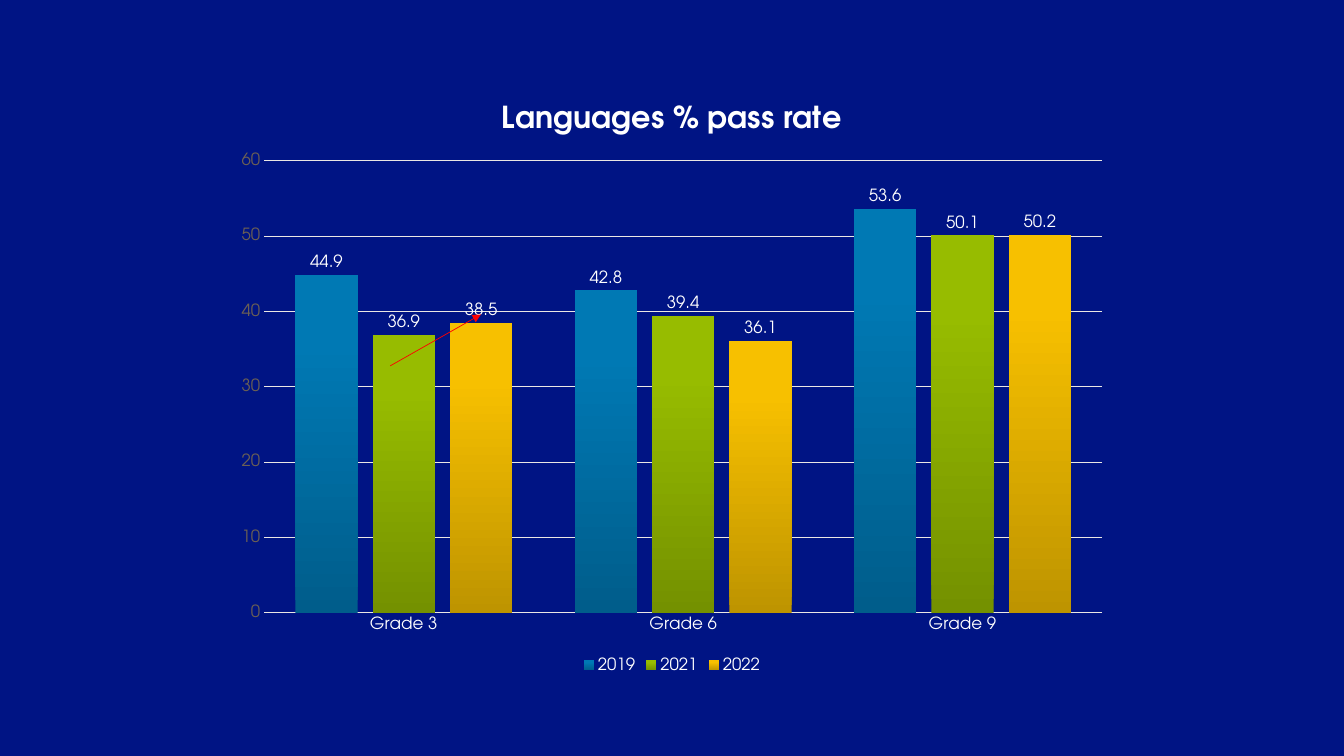
from copy import deepcopy

from lxml.etree import SubElement
from pptx import Presentation
from pptx.chart.data import CategoryChartData
from pptx.dml.color import RGBColor
from pptx.enum.chart import XL_CHART_TYPE, XL_LABEL_POSITION, XL_LEGEND_POSITION, XL_TICK_MARK
from pptx.enum.shapes import MSO_CONNECTOR
from pptx.oxml.ns import qn
from pptx.util import Inches, Pt

FONT = "TeX Gyre Adventor"
COLORS = {"background": "001484", "text": "FFFFFF", "scale": "6C6054",
          "grid": "EAE7E4", "trend": "FF0000"}
PASS_RATES = {
    "2019": ((44.9, 42.8, 53.6), ("005D8B", "0079B4", "007AB5")),
    "2021": ((36.9, 39.4, 50.1), ("749100", "97BC00", "98BD00")),
    "2022": ((38.5, 36.1, 50.2), ("BE9400", "F7C000", "F8C100")),
}


def set_font(font, color, size=12, bold=False):
    for name, value in {"name": FONT, "size": Pt(size), "bold": bold}.items():
        setattr(font, name, value)
    font.color.rgb = RGBColor.from_string(COLORS[color])


def set_line(line, color, width):
    line.color.rgb = RGBColor.from_string(COLORS[color])
    line.width = Pt(width)


deck = Presentation()
deck.slide_width, deck.slide_height = Inches(13.33), Inches(7.5)
page = deck.slides.add_slide(deck.slide_layouts[6])
page.background.fill.solid()
page.background.fill.fore_color.rgb = RGBColor.from_string(COLORS["background"])

data = CategoryChartData(number_format="0.0")
data.categories = ["Grade 3", "Grade 6", "Grade 9"]
for year, (rates, shades) in PASS_RATES.items():
    data.add_series(year, rates)
chart = page.shapes.add_chart(XL_CHART_TYPE.COLUMN_CLUSTERED, Inches(2.22), Inches(0.79),
                              Inches(8.89), Inches(5.93), data).chart
set_font(chart.font, "text")

chart.has_title = True
para = chart.chart_title.text_frame.paragraphs[0]
span = para.add_run()
span.text = "Languages % pass rate"
set_font(span.font, "text", 21.6, True)
chart.chart_title.include_in_layout = False

chart.has_legend = True
chart.legend.position = XL_LEGEND_POSITION.BOTTOM
chart.legend.include_in_layout = False
set_font(chart.legend.font, "text")

grades, scale = chart.category_axis, chart.value_axis
for axis, color in ((grades, "text"), (scale, "scale")):
    axis.major_tick_mark = axis.minor_tick_mark = XL_TICK_MARK.NONE
    set_font(axis.tick_labels.font, color)
set_line(grades.format.line, "grid", 0.75)
scale.format.line.fill.background()
set_line(scale.major_gridlines.format.line, "grid", 0.75)
scale.minimum_scale, scale.maximum_scale, scale.major_unit = 0, 60, 10
scale.tick_labels.number_format = "0"
scale.tick_labels.number_format_is_linked = False

plot = chart.plots[0]
plot.gap_width, plot.overlap, plot.vary_by_categories = 100, -24, False
for series, (rates, shades) in zip(plot.series, PASS_RATES.values()):
    fill = series.format.fill
    fill.gradient()
    fill.gradient_angle = 90
    stops = series._element.find(".//" + qn("a:gsLst"))
    stops.insert(1, deepcopy(stops[0]))
    stops[1].set("pos", "80000")
    for stop, shade in zip(fill.gradient_stops, shades):
        stop.color.rgb = RGBColor.from_string(shade)
    labels = series.data_labels
    labels.show_value = True
    labels.position = XL_LABEL_POSITION.OUTSIDE_END
    set_font(labels.font, "text")

plot_area = chart._chartSpace.find(".//" + qn("c:plotArea"))
layout = plot_area.find(qn("c:layout"))
if layout is None:
    layout = SubElement(plot_area, qn("c:layout"))
    plot_area.insert(0, layout)
frame = SubElement(layout, qn("c:manualLayout"))
for tag, value in {"layoutTarget": "inner", "xMode": "edge", "yMode": "edge",
                   "x": "0.045", "y": "0.136", "w": "0.935", "h": "0.756"}.items():
    SubElement(frame, qn("c:" + tag)).set("val", value)

trend = page.shapes.add_connector(MSO_CONNECTOR.STRAIGHT, Inches(3.87), Inches(3.63),
                                  Inches(4.77), Inches(3.12))
set_line(trend.line, "trend", 0.5)
SubElement(trend.line._get_or_add_ln(), qn("a:tailEnd")).set("type", "triangle")
SubElement(trend._element.spPr, qn("a:effectLst"))

deck.save("out.pptx")
